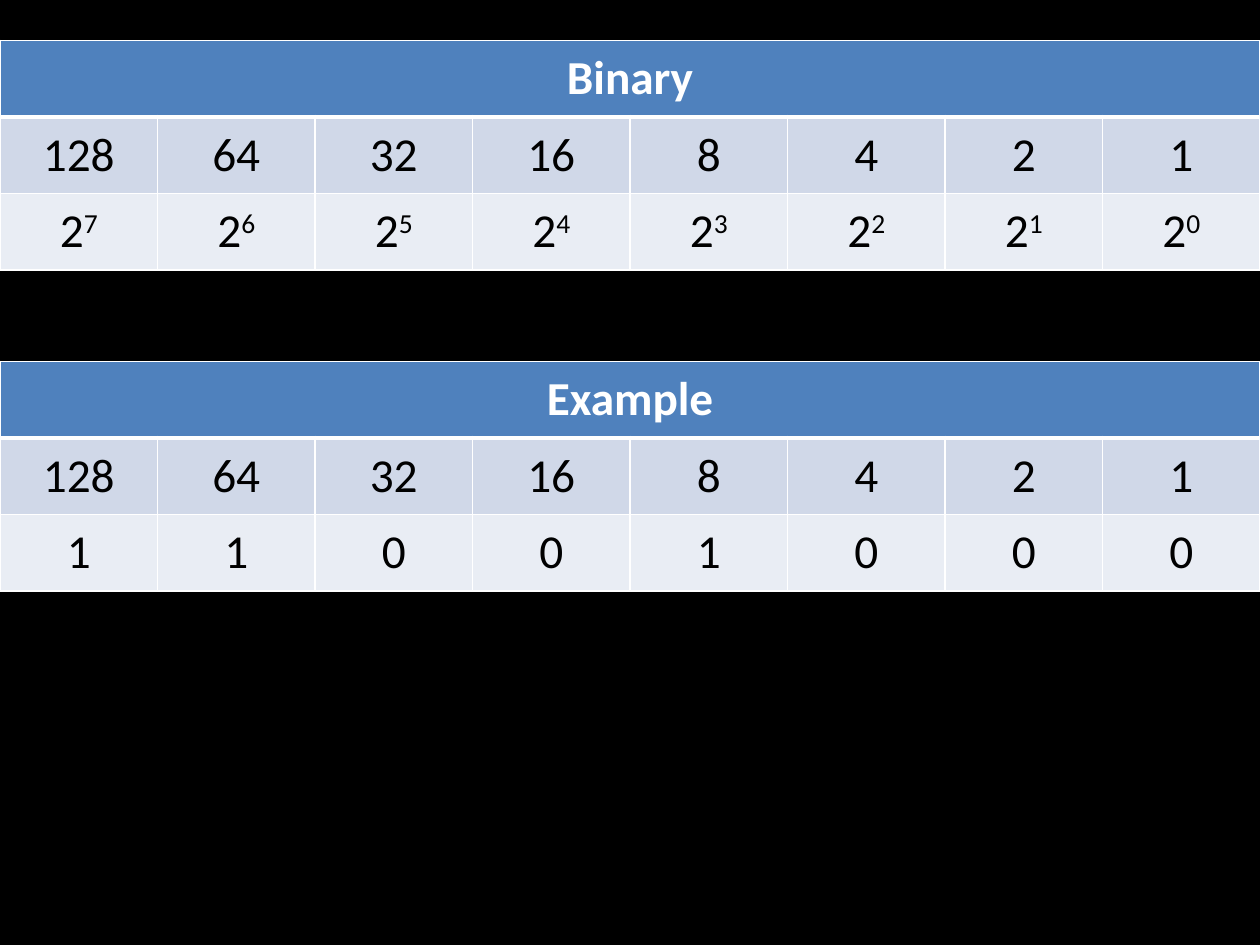
"""Build a slide with two tables on binary place values."""
from dataclasses import dataclass

from lxml import etree
from pptx import Presentation
from pptx.dml.color import RGBColor
from pptx.enum import text
from pptx.oxml import ns
from pptx.util import Pt

PLACES = [128, 64, 32, 16, 8, 4, 2, 1]
POWERS = [("2", str(n)) for n in range(7, -1, -1)]
BITS = "11001000"
TABLES = [
    {"title": "Binary", "top": 23.2, "rows": [PLACES, POWERS]},
    {"title": "Example", "top": 206.6, "rows": [PLACES, BITS]},
]
WIDTH, HEIGHT, ROW_HEIGHT = 720, 540, 43.7


@dataclass(frozen=True)
class Theme:
    font: str = "Calibri"
    size: int = 27
    background: str = "000000"
    header: str = "4F81BD"
    bands: tuple = ("D0D8E8", "E9EDF4")
    ink: str = "000000"
    white: str = "FFFFFF"
    rule: int = 1
    header_rule: int = 3
    pad_x: float = 10.8
    pad_y: float = 5.4


THEME = Theme()


def write(tf, base, exponent="", color=THEME.ink, bold=False):
    p = tf.paragraphs[0]
    p.alignment = text.PP_ALIGN.CENTER
    for content, raised in ((base, False), (exponent, True)):
        if not content:
            continue
        r = p.add_run()
        r.text = content
        r.font.name, r.font.size, r.font.bold = THEME.font, Pt(THEME.size), bold
        r.font.color.rgb = RGBColor.from_string(color)
        if raised:
            r.font._element.set("baseline", "30000")


def style_cell(cell, fill, top, bottom):
    tc_pr = cell._tc.get_or_add_tcPr()
    widths = {"lnL": THEME.rule, "lnR": THEME.rule, "lnT": top, "lnB": bottom}
    for side, width in widths.items():
        ln = etree.SubElement(tc_pr, ns.qn(f"a:{side}"), w=str(Pt(width)))
        solid = etree.SubElement(ln, ns.qn("a:solidFill"))
        etree.SubElement(solid, ns.qn("a:srgbClr"), val=THEME.white)
    cell.fill.solid()
    cell.fill.fore_color.rgb = RGBColor.from_string(fill)
    cell.vertical_anchor = text.MSO_ANCHOR.MIDDLE
    cell.margin_left = cell.margin_right = Pt(THEME.pad_x)
    cell.margin_top = cell.margin_bottom = Pt(THEME.pad_y)


def add_place_table(slide, title, top, rows):
    n_rows, n_cols = len(rows) + 1, len(PLACES)
    table = slide.shapes.add_table(
        n_rows, n_cols, 0, Pt(top), Pt(WIDTH), Pt(n_rows * ROW_HEIGHT)).table
    for col in table.columns:
        col.width = Pt(WIDTH / n_cols)
    for row in table.rows:
        row.height = Pt(ROW_HEIGHT)
    table.cell(0, 0).merge(table.cell(0, n_cols - 1))
    for i, fill in enumerate((THEME.header, *THEME.bands)):
        above = THEME.header_rule if i == 1 else THEME.rule
        below = THEME.header_rule if i == 0 else THEME.rule
        for cell in table.rows[i].cells:
            style_cell(cell, fill, above, below)
    write(table.cell(0, 0).text_frame, title, color=THEME.white, bold=True)
    for i, values in enumerate(rows, 1):
        for j, value in enumerate(values):
            parts = value if isinstance(value, tuple) else (str(value),)
            write(table.cell(i, j).text_frame, *parts)


def main():
    prs = Presentation()
    prs.slide_width, prs.slide_height = Pt(WIDTH), Pt(HEIGHT)
    slide = prs.slides.add_slide(prs.slide_layouts[6])
    slide.background.fill.solid()
    slide.background.fill.fore_color.rgb = RGBColor.from_string(THEME.background)
    for table in TABLES:
        add_place_table(slide, **table)
    prs.save("out.pptx")


if __name__ == "__main__":
    main()
